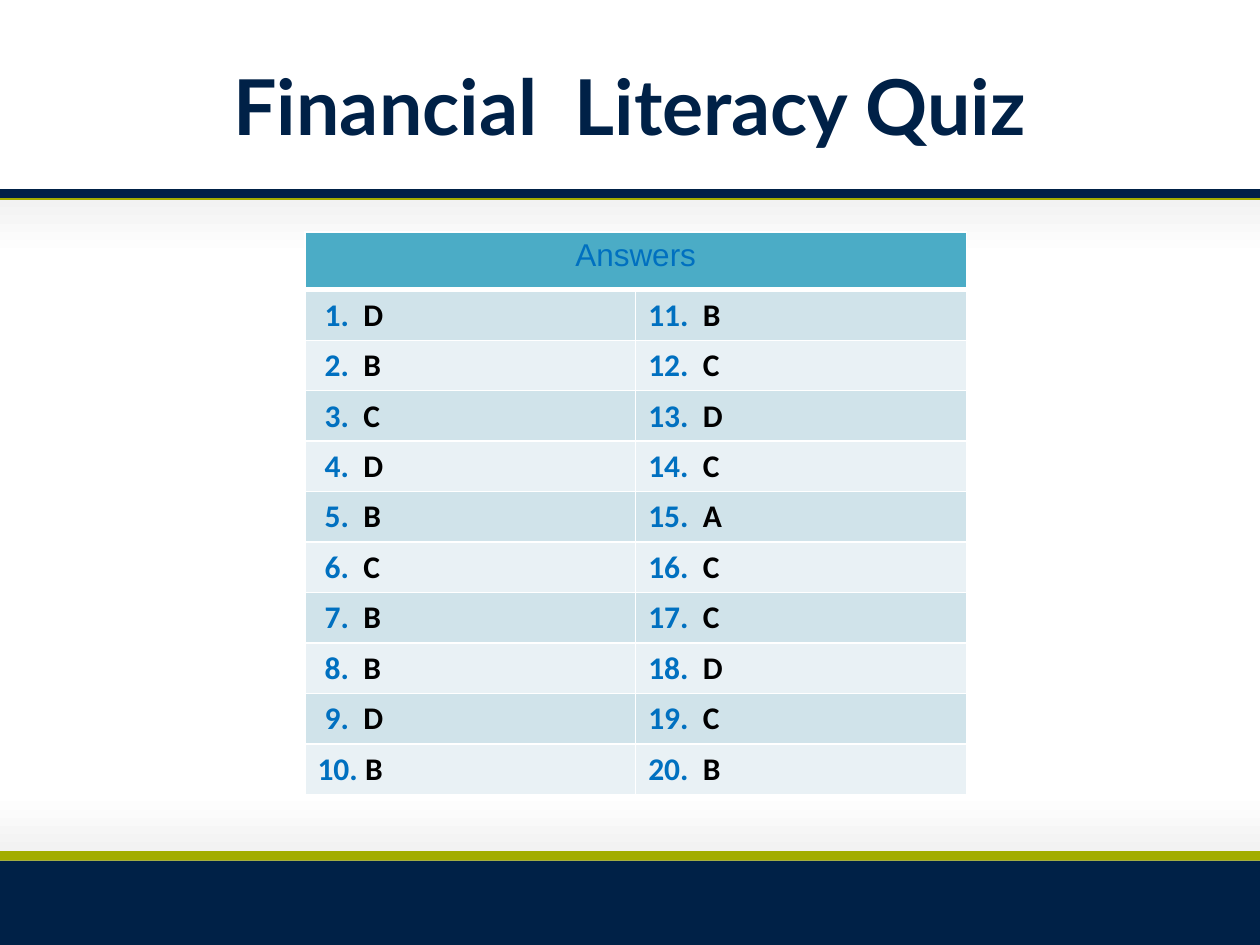
from lxml import etree
from pptx import Presentation
from pptx.dml.color import RGBColor
from pptx.enum.shapes import MSO_CONNECTOR, MSO_SHAPE
from pptx.enum.text import MSO_ANCHOR, PP_ALIGN
from pptx.oxml.ns import qn
from pptx.util import Inches, Pt

NAVY = RGBColor(0x00, 0x21, 0x47)
OLIVE = RGBColor(0xA2, 0xAD, 0x00)
PALE_GREY = RGBColor(0xF2, 0xF2, 0xF2)
WHITE = RGBColor(0xFF, 0xFF, 0xFF)
BLACK = RGBColor(0x00, 0x00, 0x00)
BLUE = RGBColor(0x00, 0x70, 0xC0)
TEAL = RGBColor(0x4B, 0xAC, 0xC6)
ROW_FILLS = (RGBColor(0xD0, 0xE3, 0xEA), RGBColor(0xE9, 0xF1, 0xF5))

RECTANGLE = MSO_SHAPE.RECTANGLE
STRAIGHT = MSO_CONNECTOR.STRAIGHT
CENTER = PP_ALIGN.CENTER
MIDDLE = MSO_ANCHOR.MIDDLE

PAGE_WIDTH = 10
ANSWERS = ("DBCDBCBBDB", "BCDCACCDCB")


def add_band(page, top, height):
    band = page.shapes.add_shape(
        RECTANGLE, 0, Inches(top), Inches(PAGE_WIDTH), Inches(height))
    band.shadow.inherit = False
    band.line.fill.background()
    return band


def add_solid_band(page, top, height, color):
    fill = add_band(page, top, height).fill
    fill.solid()
    fill.fore_color.rgb = color


def add_fading_band(page, top, height, rotation=0):
    """Grey at the top edge, fading to white; rotate by 180 to fade upward."""
    band = add_band(page, top, height)
    band.rotation = rotation
    band.fill.gradient()
    band.fill.gradient_angle = 270
    stops = ((0, PALE_GREY), (0.68, WHITE))
    for stop, (position, color) in zip(band.fill.gradient_stops, stops):
        stop.position = position
        stop.color.rgb = color


def add_rule(page, top):
    rule = page.shapes.add_connector(
        STRAIGHT, 0, Inches(top), Inches(PAGE_WIDTH), Inches(top))
    rule.line.color.rgb = OLIVE
    rule.line.width = Pt(1.5)
    etree.SubElement(rule._element.spPr, qn("a:effectLst"))


def add_background(page):
    add_solid_band(page, 6.83, 0.67, NAVY)
    add_solid_band(page, 6.75, 0.08, OLIVE)
    add_fading_band(page, 6.08, 0.67, rotation=180)
    add_fading_band(page, 1.58, 0.67)
    add_solid_band(page, 1.5, 0.08, NAVY)
    add_rule(page, 1.58)


def add_span(para, text, font, size, color, bold=False):
    span = para.add_run()
    span.text = text
    span.font.name = font
    span.font.size = Pt(size)
    span.font.color.rgb = color
    span.font.bold = bold


def add_title(page, left, top, width, height):
    box = page.shapes.add_textbox(
        Inches(left), Inches(top), Inches(width), Inches(height))
    frame = box.text_frame
    frame.word_wrap = True
    frame.vertical_anchor = MIDDLE
    para = frame.paragraphs[0]
    para.alignment = CENTER
    add_span(para, "Financial  Literacy Quiz", "Lato", 44, NAVY, bold=True)


def style_cell(cell, color, bottom_width=1):
    """Fill the cell and give it white borders."""
    cell.fill.solid()
    cell.fill.fore_color.rgb = color
    properties = cell._tc.get_or_add_tcPr()
    widths = {"a:lnL": 1, "a:lnR": 1, "a:lnT": 1, "a:lnB": bottom_width}
    for index, (tag, width) in enumerate(widths.items()):
        border = etree.Element(qn(tag), w=str(Pt(width)))
        fill = etree.SubElement(border, qn("a:solidFill"))
        etree.SubElement(fill, qn("a:srgbClr"), val=str(WHITE))
        properties.insert(index, border)


def add_answer_table(page, left, top, width):
    row_count = len(ANSWERS[0])
    header_height, row_height = 0.46, 0.39
    frame = page.shapes.add_table(
        row_count + 1, len(ANSWERS), Inches(left), Inches(top), Inches(width),
        Inches(header_height + row_count * row_height))
    table = frame.table
    for row in table.rows:
        row.height = Inches(row_height)
    table.rows[0].height = Inches(header_height)

    header = table.cell(0, 0)
    header.merge(table.cell(0, 1))
    for column in range(len(ANSWERS)):
        style_cell(table.cell(0, column), TEAL, bottom_width=3)
    para = header.text_frame.paragraphs[0]
    para.alignment = CENTER
    add_span(para, "Answers", "Arial", 18, BLUE)

    for column, letters in enumerate(ANSWERS):
        for row, letter in enumerate(letters):
            number = column * row_count + row + 1
            gap = " " if number == 10 else "  "
            cell = table.cell(row + 1, column)
            style_cell(cell, ROW_FILLS[row % 2])
            para = cell.text_frame.paragraphs[0]
            label = f" {number}." if number < 10 else f"{number}."
            add_span(para, label + gap, "Calibri", 18, BLUE, bold=True)
            add_span(para, letter, "Calibri", 18, BLACK, bold=True)


def main():
    deck = Presentation()
    deck.slide_width = Inches(PAGE_WIDTH)
    deck.slide_height = Inches(7.5)
    page = deck.slides.add_slide(deck.slide_layouts[6])
    add_background(page)
    add_title(page, 0, 0, PAGE_WIDTH, 1.67)
    add_answer_table(page, 2.42, 1.84, 5.25)
    deck.save("out.pptx")


if __name__ == "__main__":
    main()
